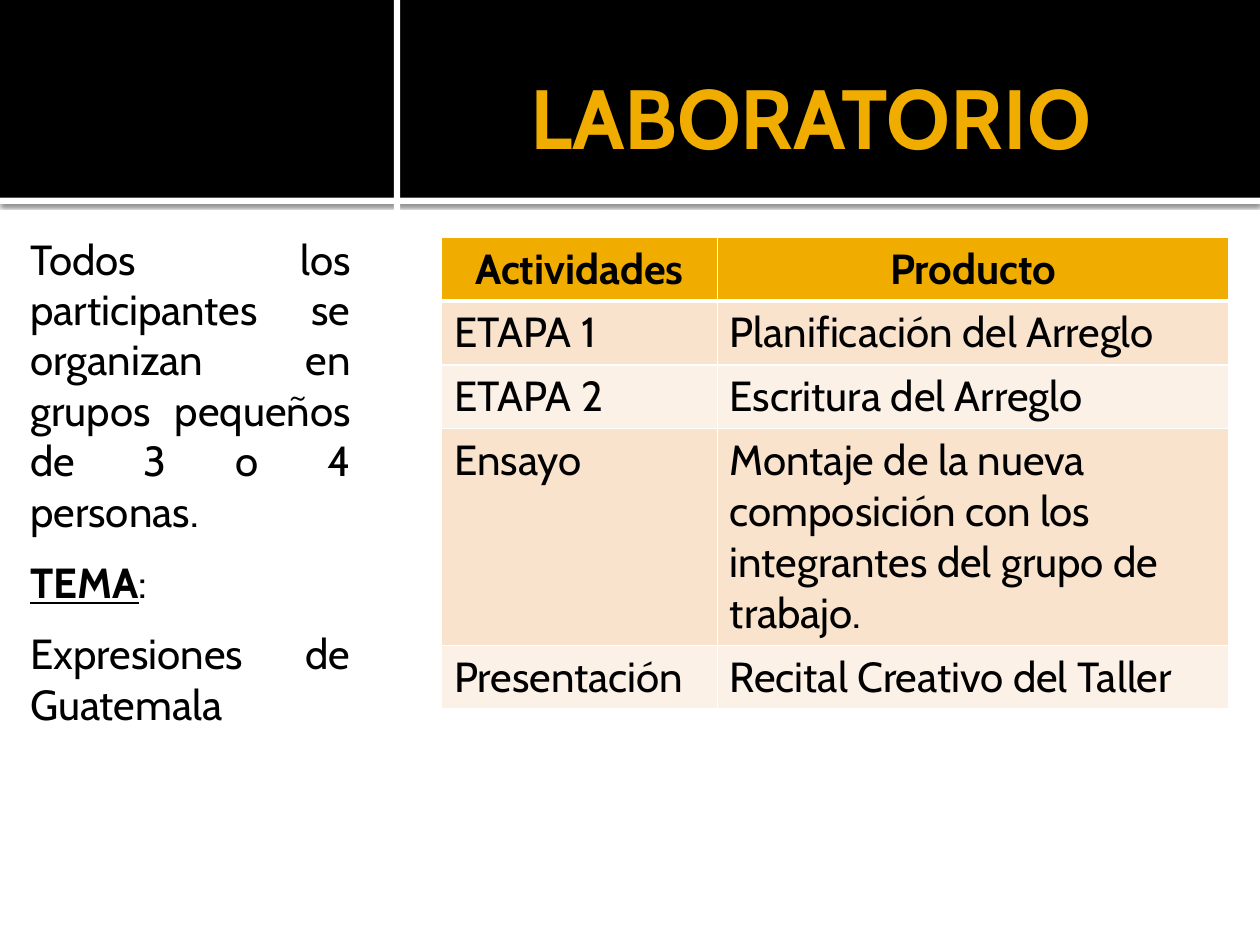
from lxml import etree
from pptx import Presentation
from pptx.dml.color import RGBColor
from pptx.enum.shapes import MSO_SHAPE
from pptx.enum.text import MSO_ANCHOR, MSO_AUTO_SIZE, PP_ALIGN
from pptx.oxml import parse_xml
from pptx.oxml.ns import nsdecls, qn
from pptx.util import Pt

RECTANGLE = MSO_SHAPE.RECTANGLE
BOTTOM = MSO_ANCHOR.BOTTOM
NO_AUTOFIT = MSO_AUTO_SIZE.NONE
LEFT, CENTER, JUSTIFY = PP_ALIGN.LEFT, PP_ALIGN.CENTER, PP_ALIGN.JUSTIFY
TITLE_ONLY = 5
FONT = "Cabin"
COLORS = {
    "black": "000000",
    "white": "FFFFFF",
    "gold": "F0AD00",
    "odd row": "F9E3CC",
    "even row": "FCF1E7",
}
ROWS = [
    ("Actividades", "Producto"),
    ("ETAPA 1", "Planificación del Arreglo"),
    ("ETAPA 2", "Escritura del Arreglo"),
    ("Ensayo", "Montaje de la nueva composición con los integrantes del grupo de trabajo."),
    ("Presentación", "Recital Creativo del Taller"),
]
COLUMN_WIDTHS = (157.5, 292.5)
ROW_HEIGHTS = (36.4, 36.4, 36.4, 123.6, 36.4)
NOTES = [
    [("Todos los participantes se organizan en grupos pequeños de 3 o 4 personas.", {})],
    [("TEMA", {"bold": True, "underline": True}), (":", {})],
    [("Expresiones de Guatemala", {})],
]


def color(name):
    return RGBColor.from_string(COLORS[name])


def set_values(target, values):
    for name, value in values.items():
        setattr(target, name, value)


def place(shape, left, top, width, height):
    set_values(shape, {"left": Pt(left), "top": Pt(top), "width": Pt(width), "height": Pt(height)})


def add_run(paragraph, text, size=24, color_name="black", **style):
    run = paragraph.add_run()
    run.text = text
    set_values(run.font, {"name": FONT, "size": Pt(size), "bold": False, **style})
    run.font.color.rgb = color(color_name)


def format_frame(frame, left, top, right, bottom):
    set_values(frame, {
        "word_wrap": True,
        "auto_size": NO_AUTOFIT,
        "margin_left": Pt(left),
        "margin_top": Pt(top),
        "margin_right": Pt(right),
        "margin_bottom": Pt(bottom),
    })


def add_bar(slide, color_name, left, top, width, height):
    bar = slide.shapes.add_shape(RECTANGLE, Pt(left), Pt(top), Pt(width), Pt(height))
    bar.shadow.inherit = False
    bar.fill.solid()
    bar.fill.fore_color.rgb = color(color_name)
    bar.line.fill.background()
    return bar


def add_shadow(shape):
    effects = shape._element.spPr.find(qn("a:effectLst"))
    effects.append(parse_xml(
        f'<a:outerShdw {nsdecls("a")} blurRad="{Pt(2.5)}" dist="{Pt(0.8)}" dir="5400000">'
        f'<a:srgbClr val="{COLORS["black"]}"><a:alpha val="60000"/></a:srgbClr></a:outerShdw>'
    ))


def write_title(slide):
    title = slide.shapes.title
    slide.shapes._spTree.append(title._element)  # bring in front of the header bar
    place(title, 270, 18, 384, 77)
    format_frame(title.text_frame, 6, 3.6, 3.6, 0)
    title.text_frame.vertical_anchor = BOTTOM
    paragraph = title.text_frame.paragraphs[0]
    paragraph.alignment = CENTER
    add_run(paragraph, "LABORATORIO", 48, "gold", bold=True)


def add_notes(slide):
    box = slide.shapes.add_textbox(Pt(13), Pt(126), Pt(194.4), Pt(282))
    frame = box.text_frame
    format_frame(frame, 4.3, 7.2, 7.2, 3.6)
    for index, runs in enumerate(NOTES):
        paragraph = frame.add_paragraph() if index else frame.paragraphs[0]
        set_values(paragraph, {
            "alignment": JUSTIFY,
            "space_before": Pt(6 if index else 0),
            "space_after": Pt(6),
        })
        for text, style in runs:
            add_run(paragraph, text, **style)


def set_borders(cell, bottom_width):
    """Draw white borders; they must precede the fill in the cell properties."""
    properties = cell._tc.get_or_add_tcPr()
    for tag, width in (("a:lnL", 1), ("a:lnR", 1), ("a:lnT", 1), ("a:lnB", bottom_width)):
        line = etree.SubElement(properties, qn(tag), w=str(Pt(width)))
        fill = etree.SubElement(line, qn("a:solidFill"))
        etree.SubElement(fill, qn("a:srgbClr"), val=COLORS["white"])


def add_activity_table(slide):
    frame = slide.shapes.add_table(
        len(ROWS), len(COLUMN_WIDTHS), Pt(252.4), Pt(135.7),
        Pt(sum(COLUMN_WIDTHS)), Pt(sum(ROW_HEIGHTS)))
    table = frame.table
    for column, width in zip(table.columns, COLUMN_WIDTHS):
        column.width = Pt(width)
    for index, (row, height, texts) in enumerate(zip(table.rows, ROW_HEIGHTS, ROWS)):
        row.height = Pt(height)
        header = index == 0
        fill_name = "gold" if header else "odd row" if index % 2 else "even row"
        for cell, text in zip(row.cells, texts):
            set_borders(cell, 3 if header else 1)
            cell.fill.solid()
            cell.fill.fore_color.rgb = color(fill_name)
            paragraph = cell.text_frame.paragraphs[0]
            paragraph.alignment = CENTER if header else LEFT
            add_run(paragraph, text, bold=header)


def main():
    presentation = Presentation()
    set_values(presentation, {"slide_width": Pt(720), "slide_height": Pt(540)})
    slide = presentation.slides.add_slide(presentation.slide_layouts[TITLE_ONLY])
    add_shadow(add_bar(slide, "white", 0, 113, 720, 3.6))
    add_bar(slide, "black", 0, 0, 720, 113)
    add_bar(slide, "white", 225, 0, 3.6, 540)
    write_title(slide)
    add_notes(slide)
    add_activity_table(slide)
    presentation.save("out.pptx")


if __name__ == "__main__":
    main()
